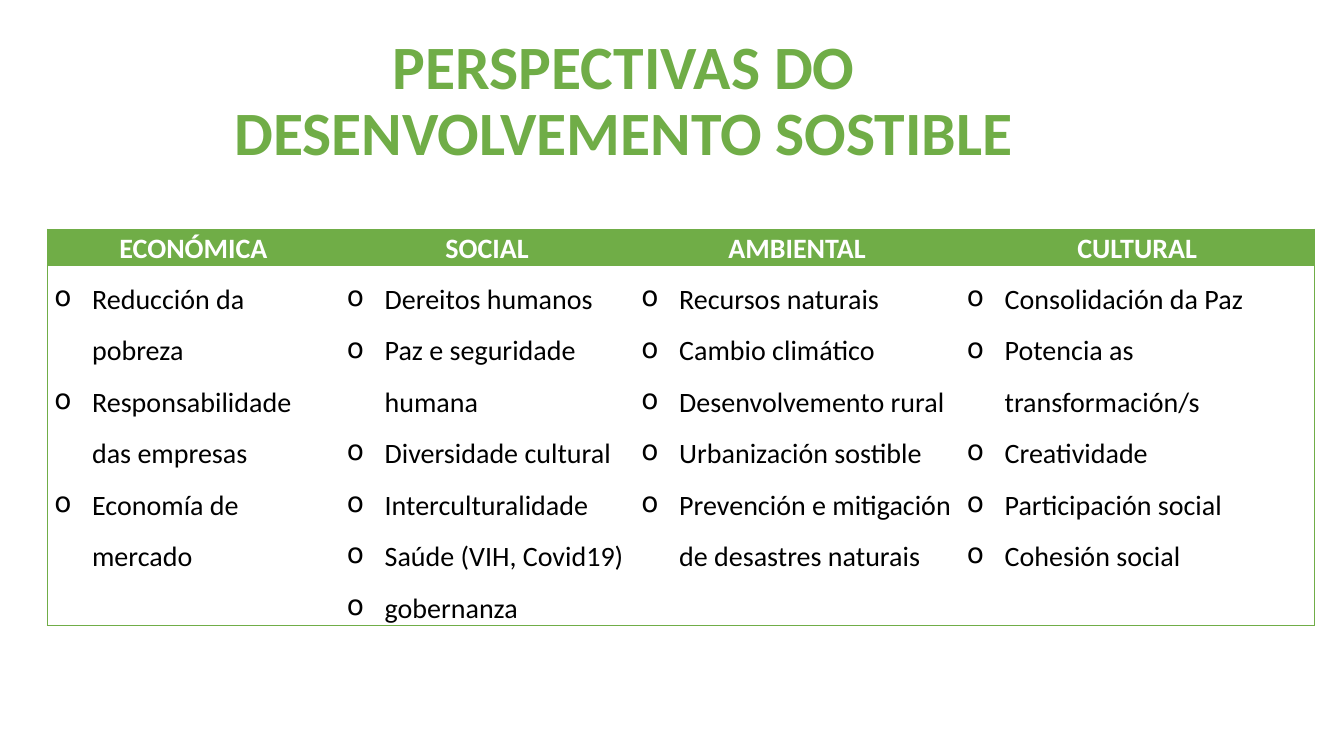
from lxml import etree
from pptx import Presentation, util as u
from pptx.dml.color import RGBColor
from pptx.enum import text
from pptx.oxml import ns

GREEN = RGBColor(0x70, 0xAD, 0x47)
WHITE = RGBColor(0xFF, 0xFF, 0xFF)
BLACK = RGBColor(0, 0, 0)

TITLE = "PERSPECTIVAS DO DESENVOLVEMENTO SOSTIBLE"
VIEWS = {
    "ECONÓMICA": ["Reducción da pobreza", "Responsabilidade das empresas",
                  "Economía de mercado"],
    "SOCIAL": ["Dereitos humanos", "Paz e seguridade humana",
               "Diversidade cultural", "Interculturalidade",
               "Saúde (VIH, Covid19)", "gobernanza"],
    "AMBIENTAL": ["Recursos naturais", "Cambio climático",
                  "Desenvolvemento rural", "Urbanización sostible",
                  "Prevención e mitigación de desastres naturais"],
    "CULTURAL": ["Consolidación da Paz", "Potencia as transformación/s",
                 "Creatividade", "Participación social", "Cohesión social"],
}
WIDTHS = [7.37, 7.42, 8.2, 8.94]
HEIGHTS = [0.86, 8.2]


class Deck:
    """Holds the style and the current slide, and adds its elements."""

    def __init__(self, font="Calibri", size=20):
        """Open a wide deck with one title-only slide."""
        self.font, self.size = font, size
        self.prs = Presentation()
        self.prs.slide_width, self.prs.slide_height = u.Inches(13.33), u.Inches(7.5)
        self.slide = self.prs.slides.add_slide(self.prs.slide_layouts[5])

    def run(self, para, words, color, bold=False, size=None):
        """Add one styled run to a paragraph."""
        run = para.add_run()
        run.text = words
        run.font.name, run.font.size = self.font, u.Pt(size or self.size)
        run.font.bold, run.font.color.rgb = bold, color

    def title(self, words, left, top, width, height):
        """Place and fill the title."""
        box = self.slide.shapes.title
        box.left, box.top = u.Cm(left), u.Cm(top)
        box.width, box.height = u.Cm(width), u.Cm(height)
        frame = box.text_frame
        frame.word_wrap = True
        frame.auto_size = text.MSO_AUTO_SIZE.NONE
        frame.vertical_anchor = text.MSO_ANCHOR.MIDDLE
        para = frame.paragraphs[0]
        para.alignment, para.line_spacing = text.PP_ALIGN.CENTER, 0.9
        self.run(para, words, GREEN, True, 44)

    def edge(self, cell, sides):
        """Draw the named sides of a cell and clear the others."""
        props = cell._tc.get_or_add_tcPr()
        for spot, side in enumerate("LRTB"):
            line = etree.Element(ns.qn(f"a:ln{side}"))
            if side in sides:
                line.set("w", str(u.Pt(0.5)))
                fill = etree.SubElement(line, ns.qn("a:solidFill"))
                etree.SubElement(fill, ns.qn("a:srgbClr"), val=str(GREEN))
            else:
                etree.SubElement(line, ns.qn("a:noFill"))
            props.insert(spot, line)

    def cell(self, cell, sides):
        """Set margins and borders of a cell and return its text frame."""
        cell.margin_left = cell.margin_right = u.Cm(0.18)
        cell.margin_top = cell.margin_bottom = 0
        self.edge(cell, sides)
        return cell.text_frame

    def head(self, cell, words, sides):
        """Fill a heading cell."""
        para = self.cell(cell, sides).paragraphs[0]
        cell.fill.solid()
        cell.fill.fore_color.rgb = GREEN
        para.alignment = text.PP_ALIGN.CENTER
        para.line_spacing, para.space_after = 1.07, u.Pt(8)
        self.run(para, words, WHITE, True)

    def list(self, cell, items, sides):
        """Fill a cell with a bulleted list."""
        frame = self.cell(cell, sides)
        cell.fill.background()
        for spot, item in enumerate(items):
            para = frame.add_paragraph() if spot else frame.paragraphs[0]
            para.line_spacing = 1.5
            props = para._p.get_or_add_pPr()
            props.set("marL", str(u.Cm(0.95)))
            props.set("indent", str(u.Cm(-0.95)))
            etree.SubElement(props, ns.qn("a:buChar"), char="o")
            self.run(para, item, BLACK)

    def table(self, views, left, top):
        """Add a table with one headed list in each column."""
        grid = self.slide.shapes.add_table(
            len(HEIGHTS), len(WIDTHS), u.Cm(left), u.Cm(top),
            u.Cm(sum(WIDTHS)), u.Cm(sum(HEIGHTS))).table
        grid.horz_banding = False
        for row, height in zip(grid.rows, HEIGHTS):
            row.height = u.Cm(height)
        for col, (name, items) in enumerate(views.items()):
            grid.columns[col].width = u.Cm(WIDTHS[col])
            sides = {0: "L", len(views) - 1: "R"}.get(col, "")
            self.head(grid.cell(0, col), name, sides + "TB")
            self.list(grid.cell(1, col), items, sides + "TB")


def main():
    """Build and save the slide."""
    deck = Deck()
    deck.title(TITLE, 3.58, 0.74, 24.28, 3.68)
    deck.table(VIEWS, 1.19, 5.77)
    deck.prs.save("out.pptx")


if __name__ == "__main__":
    main()
